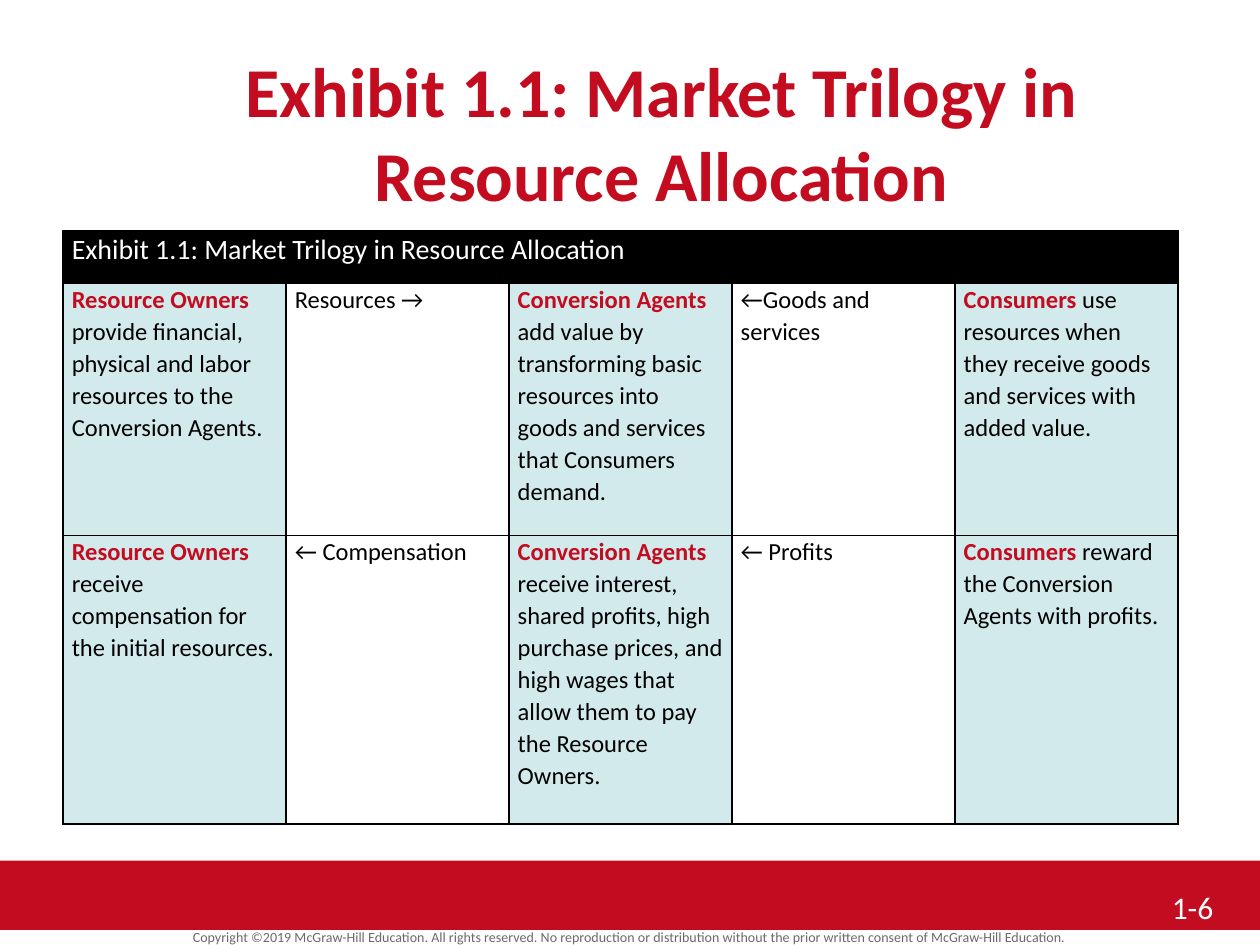
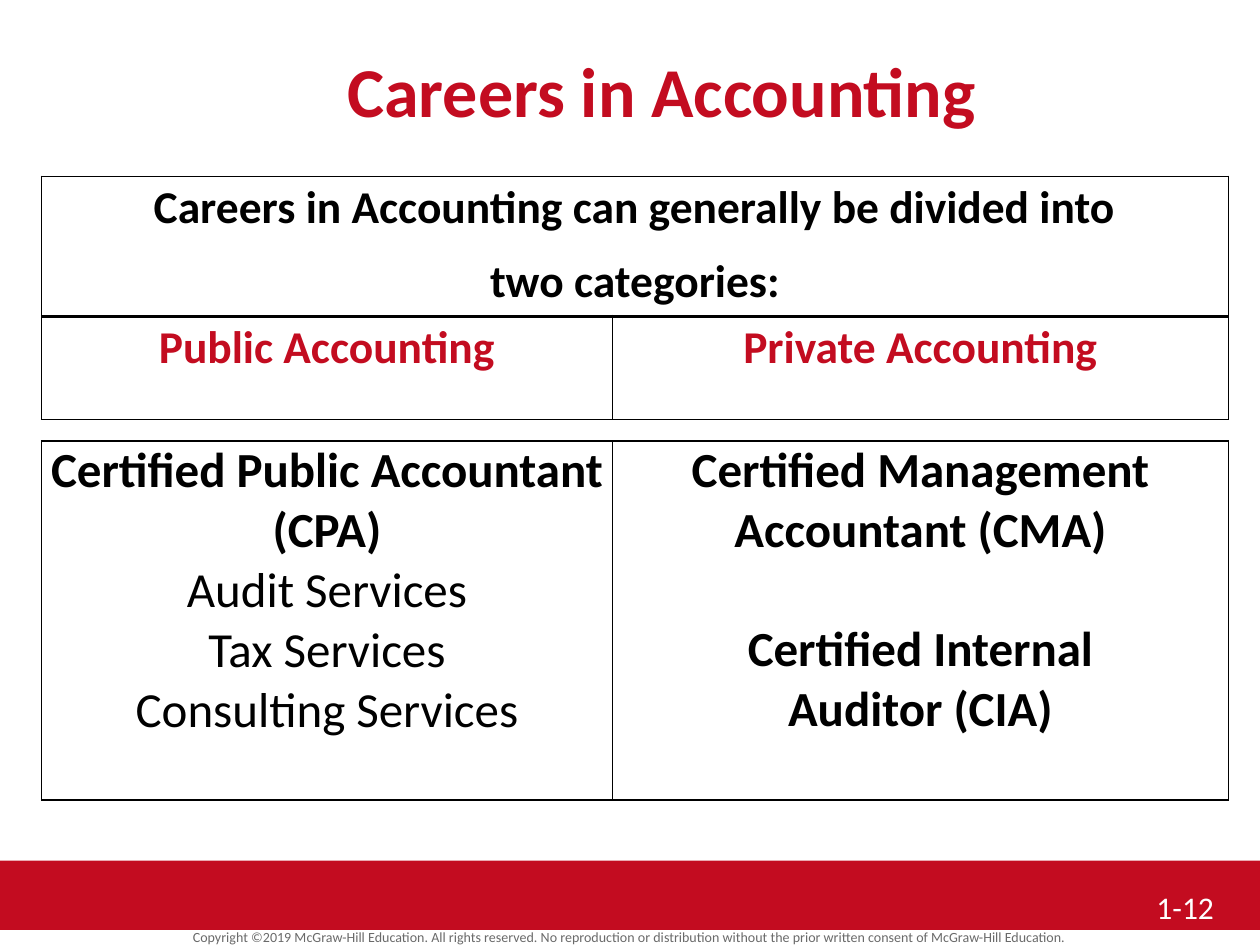
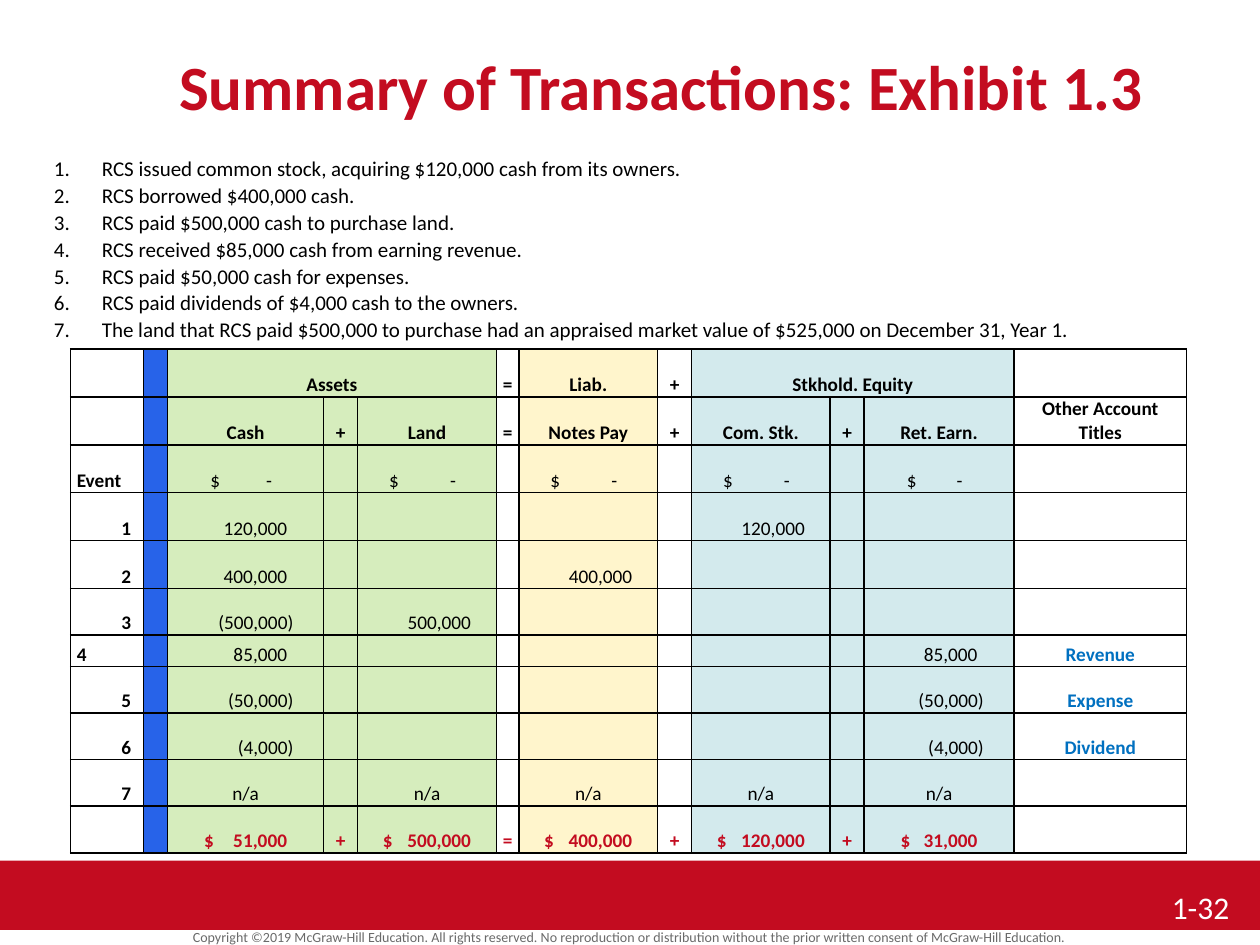
from lxml import etree
from pptx import Presentation
from pptx.dml.color import RGBColor
from pptx.enum import shapes, text
from pptx.oxml import ns
from pptx.util import Inches, Pt

HUES = {
    "red": "C30C20", "black": "000000", "white": "FFFFFF", "grey": "6A6A6A",
    "aqua": "D3EAED", "green": "D6EDBD", "cream": "FFF5CC",
    "royal": "2763E9", "blue": "0070C0",
}
FONT = "Calibri"
LEFT, MID, RIGHT = text.PP_ALIGN.LEFT, text.PP_ALIGN.CENTER, text.PP_ALIGN.RIGHT
TOP, CORE, BASE = text.MSO_ANCHOR.TOP, text.MSO_ANCHOR.MIDDLE, text.MSO_ANCHOR.BOTTOM
LEGAL = ("Copyright ©2019 McGraw-Hill Education. All rights reserved. No reproduction or "
         "distribution without the prior written consent of McGraw-Hill Education.")

EVENTS = [
    "RCS issued common stock, acquiring $120,000 cash from its owners.",
    "RCS borrowed $400,000 cash.",
    "RCS paid $500,000 cash to purchase land.",
    "RCS received $85,000 cash from earning revenue.",
    "RCS paid $50,000 cash for expenses.",
    "RCS paid dividends of $4,000 cash to the owners.",
    "The land that RCS paid $500,000 to purchase had an appraised market value of "
    "$525,000 on December 31, Year 1.",
]
TRILOGY = [
    [("Resource Owners", " provide financial, physical and labor resources to the "
      "Conversion Agents."),
     ("", "Resources →"),
     ("Conversion Agents", " add value by transforming basic resources into goods and "
      "services that Consumers demand."),
     ("", "←Goods and services"),
     ("Consumers", " use resources when they receive goods and services with added value.")],
    [("Resource Owners", " receive compensation for the initial resources."),
     ("", "← Compensation"),
     ("Conversion Agents", " receive interest, shared profits, high purchase prices, and "
      "high wages that allow them to pay the Resource Owners."),
     ("", "← Profits"),
     ("Consumers", " reward the Conversion Agents with profits.")],
]
NIL = "$\t-"
LEDGER = [
    ["", "", "Assets", "", "", "=", "Liab.", "+", "Stkhold. Equity", "", "", ""],
    ["", "", "Cash", "+", "Land", "=", "Notes Pay", "+", "Com. Stk.", "+", "Ret. Earn.",
     "Other Account Titles"],
    ["Event", "", NIL, "", NIL, "", NIL, "", NIL, "", NIL, ""],
    ["1", "", "120,000", "", "", "", "", "", "120,000", "", "", ""],
    ["2", "", "400,000", "", "", "", "400,000", "", "", "", "", ""],
    ["3", "", "(500,000)", "", "500,000", "", "", "", "", "", "", ""],
    ["4", "", "85,000", "", "", "", "", "", "", "", "85,000", "Revenue"],
    ["5", "", "(50,000)", "", "", "", "", "", "", "", "(50,000)", "Expense"],
    ["6", "", "(4,000)", "", "", "", "", "", "", "", "(4,000)", "Dividend"],
    ["7", "", "n/a", "", "n/a", "", "n/a", "", "n/a", "", "n/a", ""],
    ["", "", "$\t51,000", "+", "$\t500,000", "=", "$\t400,000", "+", "$\t120,000", "+",
     "$\t31,000", ""],
]
TINTS = [None, "royal"] + ["green"] * 3 + [None, "cream", None] + ["aqua"] * 3 + [None]


def rgb(hue):
    return RGBColor.from_string(HUES[hue])


def node(parent, tag, **attrs):
    item = etree.SubElement(parent, ns.qn(tag))
    for key, value in attrs.items():
        item.set(key, str(value))
    return item


def write(frame, paras, size=18, hue="black", bold=False, align=LEFT, space=1, after=0,
          num=False, tab=None):
    """Fill a frame; a paragraph is a string or a list of (text, format changes)."""
    for i, para in enumerate(paras):
        p = frame.paragraphs[0] if i == 0 else frame.add_paragraph()
        props = p._p.get_or_add_pPr()
        if num:
            props.set("marL", str(Inches(0.38)))
            props.set("indent", str(-Inches(0.38)))
            node(props, "a:buFont", typeface=FONT)
            node(props, "a:buAutoNum", type="arabicPeriod")
        if tab:
            node(node(props, "a:tabLst"), "a:tab", pos=Inches(tab), algn="r")
        p.alignment, p.line_spacing, p.space_after = align, space, Pt(after)
        for words, change in [(para, {})] if isinstance(para, str) else para:
            if not words:
                continue
            if "before" in change:
                p.space_before = Pt(change["before"])
            run = p.add_run()
            run.text = words
            run.font.name, run.font.size = FONT, Pt(size)
            run.font.bold = change.get("bold", bold)
            run.font.color.rgb = rgb(change.get("hue", hue))
        if not p.runs:
            node(p._p, "a:endParaRPr", sz=size * 100)


def label(slide, x, y, w, h, paras, pad=(0.1, 0.05), anchor=TOP, **fmt):
    frame = slide.shapes.add_textbox(*map(Inches, (x, y, w, h))).text_frame
    frame.word_wrap, frame.vertical_anchor = True, anchor
    frame.margin_left = frame.margin_right = Inches(pad[0])
    frame.margin_top = frame.margin_bottom = Inches(pad[1])
    write(frame, paras, **fmt)


def page(deck, title, number, size=40, inset=0.1):
    slide = deck.slides.add_slide(deck.slide_layouts[5])
    band = slide.shapes.add_shape(shapes.MSO_SHAPE.RECTANGLE,
                                  *map(Inches, (0, 6.83, 10, 0.55)))
    band.shadow.inherit = False
    band.fill.solid()
    band.fill.fore_color.rgb = rgb("red")
    band.line.fill.background()
    label(slide, 0, 7.34, 10, 0.19, [LEGAL], pad=(0, 0), anchor=CORE, size=8,
          hue="grey", align=MID)
    label(slide, 9.08, 7, 0.92, 0.42, [number], pad=(inset, 0.05), hue="white")
    head = slide.shapes.title
    head.left, head.top, head.width, head.height = map(Inches, (0.75, 0.33, 9, 1.25))
    head.text_frame.auto_size = text.MSO_AUTO_SIZE.NONE
    head.text_frame.vertical_anchor = TOP
    write(head.text_frame, [title], size=size, hue="red", bold=True, align=MID)
    return slide


def edge(cell, **widths):
    for side in "LRTB":
        line = node(cell._tc.get_or_add_tcPr(), "a:ln" + side,
                    w=Pt(widths.get(side, 1)))
        node(node(line, "a:solidFill"), "a:srgbClr", val=HUES["black"])


def grid(slide, x, y, cols, rows, rule=1):
    """Add a plain ruled table; rule is the line width below its first row."""
    table = slide.shapes.add_table(len(rows), len(cols), *map(
        Inches, (x, y, sum(cols), sum(rows)))).table
    table.first_row = table.horz_banding = False
    for col, width in zip(table.columns, cols):
        col.width = Inches(width)
    for r, height in enumerate(rows):
        table.rows[r].height = Inches(height)
        for c in range(len(cols)):
            low = rule if r == 0 and len(rows) > 1 else 1
            edge(table.cell(r, c), B=low, T=rule if r == 1 else 1)
    return table


def fill(cell, paras, tint=None, left=0.07, right=0.07, anchor=TOP, **fmt):
    cell.margin_left, cell.margin_right = Inches(left), Inches(right)
    cell.margin_top = cell.margin_bottom = 0
    cell.vertical_anchor = anchor
    if tint:
        cell.fill.solid()
        cell.fill.fore_color.rgb = rgb(tint)
    else:
        cell.fill.background()
    write(cell.text_frame, paras, **fmt)


def trilogy(deck):
    name = "Exhibit 1.1: Market Trilogy in Resource Allocation"
    slide = page(deck, name, "1-6", inset=0.22)
    table = grid(slide, 0.5, 1.83, [1.77] * 5, [0.42, 2, 2.29])
    table.cell(0, 0).merge(table.cell(0, 4))
    fill(table.cell(0, 0), [name], "black", size=16, hue="white", space=1.07, after=8)
    for r, row in enumerate(TRILOGY, 1):
        for c, (who, what) in enumerate(row):
            fill(table.cell(r, c), [[(who, {"hue": "red", "bold": True}), (what, {})]],
                 "aqua" if who else None, size=14, space=1.07, after=8)


def careers(deck):
    slide = page(deck, "Careers in Accounting", "1-12")
    cols = [4.53, 4.89]
    kinds = grid(slide, 0.33, 1.4, cols, [1.11, 0.82], rule=2)
    kinds.cell(0, 0).merge(kinds.cell(0, 1))
    look = dict(size=26, bold=True, align=MID, space=1.07, after=8)
    fill(kinds.cell(0, 0),
         ["Careers in Accounting can generally be divided into", "two categories:"], **look)
    for c, kind in enumerate(["Public Accounting", "Private Accounting"]):
        fill(kinds.cell(1, c), [kind], hue="red", **look)
    jobs = grid(slide, 0.33, 3.5, cols, [2.85])
    fill(jobs.cell(0, 0),
         [[("Certified Public Accountant (CPA)", {"bold": True})], "Audit Services",
          "Tax Services", "Consulting Services"], size=28, align=MID)
    fill(jobs.cell(0, 1),
         ["Certified Management Accountant (CMA)",
          [("Certified Internal", {"before": 34})], "Auditor (CIA)"],
         size=28, bold=True, align=MID)


def place(words, r, c, width):
    """Return margins, alignment and tab for one ledger cell."""
    if c == 0:
        side = LEFT if words in ("Event", "4") else RIGHT
        return dict(left=0.05, right=0.1, align=side)
    if r < 2 or not words[:1] or words[0] not in "$(0123456789":
        pad = 0.1 if c == 11 else 0.02
        return dict(left=pad, right=pad, align=MID)
    pad = 0.29 if width > 1.15 else 0.2
    if "\t" in words:
        left, end = (pad + 0.05, pad + 0.12) if words == NIL else (pad, pad)
        return dict(left=left, right=0.05, tab=round(width - left - end, 2))
    return dict(left=0.05, right=pad - 0.05 * words.endswith(")"), align=RIGHT)


def ledger(deck):
    slide = page(deck, "Summary of Transactions: Exhibit 1.3", "1-32", size=36, inset=0.22)
    cols = [0.58, 0.19, 1.24, 0.27, 1.1, 0.18, 1.1, 0.27, 1.1, 0.27, 1.19, 1.37]
    table = grid(slide, 0.56, 2.77, cols, [0.38] * 5 + [0.37, 0.25] + [0.37] * 4)
    for c in (2, 8):
        table.cell(0, c).merge(table.cell(0, c + 2))
    last = len(LEDGER) - 1
    for r, row in enumerate(LEDGER):
        for c, words in enumerate(row):
            hue = "red" if r == last else "blue" if c == 11 and r > 1 else "black"
            fill(table.cell(r, c), [words], TINTS[c], anchor=BASE, size=11, hue=hue,
                 bold=r in (0, 1, last) or c in (0, 11), **place(words, r, c, cols[c]))
    label(slide, 0.33, 1.17, 9.21, 1.6, EVENTS, size=12, space=1.07, num=True)


def main():
    deck = Presentation()
    deck.slide_width, deck.slide_height = Inches(10), Inches(7.5)
    trilogy(deck)
    careers(deck)
    ledger(deck)
    deck.save("out.pptx")


if __name__ == "__main__":
    main()
